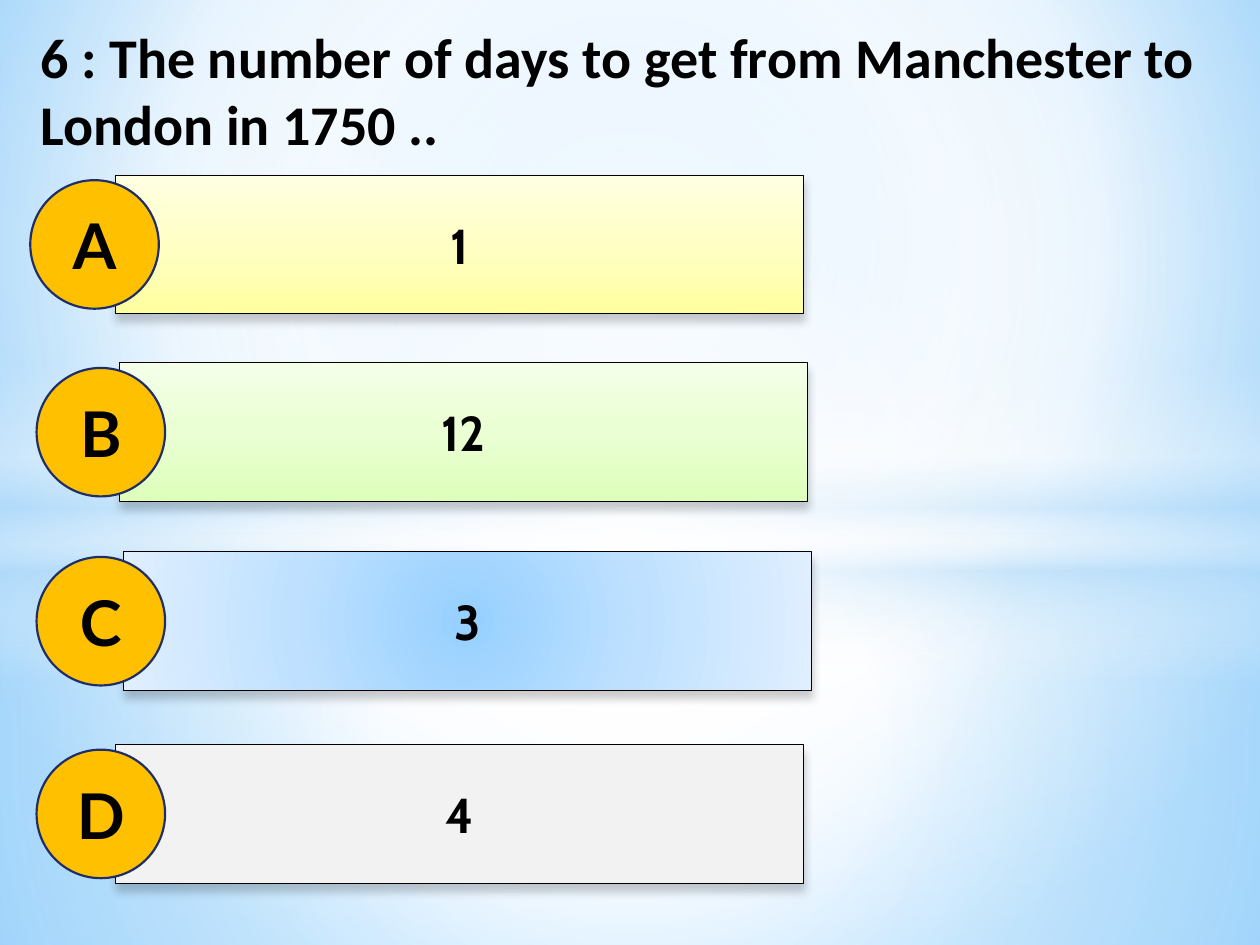
import lxml.etree
import pptx
import pptx.dml.color
import pptx.enum.shapes
import pptx.enum.text
import pptx.oxml
import pptx.oxml.ns
import pptx.util

Inches = pptx.util.Inches
Pt = pptx.util.Pt
RGBColor = pptx.dml.color.RGBColor
SHAPES = pptx.enum.shapes.MSO_SHAPE
ANCHOR = pptx.enum.text.MSO_ANCHOR
ALIGN = pptx.enum.text.PP_ALIGN
qn = pptx.oxml.ns.qn

BLACK = RGBColor(0x00, 0x00, 0x00)
WHITE = RGBColor(0xFF, 0xFF, 0xFF)
SKY = RGBColor(0xB4, 0xDC, 0xFA)
GOLD = RGBColor(0xFF, 0xC0, 0x00)
NAVY = RGBColor(0x1F, 0x2E, 0x69)
GREY = RGBColor(0xF2, 0xF2, 0xF2)
YELLOWS = RGBColor(0xFF, 0xFF, 0xA0), RGBColor(0xFF, 0xFF, 0xC5), RGBColor(0xFF, 0xFF, 0xE3)
GREENS = RGBColor(0xDE, 0xFF, 0xBB), RGBColor(0xEA, 0xFF, 0xD3), RGBColor(0xF4, 0xFF, 0xE9)
BLUES = RGBColor(0x96, 0xD0, 0xFF), RGBColor(0xBF, 0xE1, 0xFF), RGBColor(0xE0, 0xEF, 0xFF)
PALE_SKY = RGBColor(0x9E, 0xD5, 0xFF)
DEEP_SKY = RGBColor(0x5B, 0xB9, 0xFF)

CENTRE = (50, 50, 50, 50)


def add_element(parent, tag, **attributes):
    element = lxml.etree.SubElement(parent, qn(tag))
    for name, value in attributes.items():
        element.set(name, str(value))
    return element


def add_colour(parent, colour, opacity):
    element = add_element(parent, "a:srgbClr", val=colour)
    if opacity < 100:
        add_element(element, "a:alpha", val=opacity * 1000)


def set_gradient(properties, stops, angle=None, focus=CENTRE):
    """Swap a solid fill for a gradient; stops are (position, colour, opacity)."""
    gradient = pptx.oxml.parse_xml("<a:gradFill %s/>" % pptx.oxml.ns.nsdecls("a"))
    gradient.set("rotWithShape", "1")
    stop_list = add_element(gradient, "a:gsLst")
    for position, colour, opacity in stops:
        add_colour(add_element(stop_list, "a:gs", pos=position * 1000), colour, opacity)
    if angle is None:
        circle = add_element(gradient, "a:path")
        circle.set("path", "circle")
        sides = {side: value * 1000 for side, value in zip("ltrb", focus)}
        add_element(circle, "a:fillToRect", **sides)
    else:
        add_element(gradient, "a:lin", ang=angle * 60000, scaled=0)
    properties.replace(properties.find(qn("a:solidFill")), gradient)


class QuizSlide:
    title_font, answer_font, letter_font = "Calibri", "Cabin", "Lato"

    def __init__(self, presentation):
        self.slide = presentation.slides.add_slide(presentation.slide_layouts[5])

    def background(self, stops, focus):
        self.slide.background.fill.solid()
        properties = self.slide.element.find(".//" + qn("p:bgPr"))
        set_gradient(properties, stops, focus=focus)

    def shape(self, kind, left, top, width, height, colour):
        shape = self.slide.shapes.add_shape(
            kind, Inches(left), Inches(top), Inches(width), Inches(height))
        shape.shadow.inherit = False
        shape.fill.solid()
        shape.fill.fore_color.rgb = colour
        shape.line.fill.background()
        return shape

    def wash(self, kind, top, height, stops, angle=None):
        shape = self.shape(kind, 0, top, 10, height, WHITE)
        set_gradient(shape.element.spPr, stops, angle)

    def add_text(self, shape, text, font, size, alignment):
        paragraph = shape.text_frame.paragraphs[0]
        paragraph.alignment = alignment
        run = paragraph.add_run()
        run.text = text
        run.font.name = font
        run.font.size = Pt(size)
        run.font.bold = True
        run.font.color.rgb = BLACK

    def title(self, text, left, top, width, height):
        title = self.slide.shapes.title
        title.left, title.top = Inches(left), Inches(top)
        title.width, title.height = Inches(width), Inches(height)
        title.text_frame.word_wrap = True
        title.text_frame.auto_size = pptx.enum.text.MSO_AUTO_SIZE.NONE
        title.text_frame.vertical_anchor = ANCHOR.TOP
        self.add_text(title, text, self.title_font, 32, ALIGN.LEFT)
        # Bring the title in front of the washes
        self.slide.shapes.element.append(title.element)

    def outline(self, shape, colour, width):
        shape.line.color.rgb = colour
        shape.line.width = Pt(width)
        shape.text_frame.vertical_anchor = ANCHOR.MIDDLE

    def answer_bar(self, text, left, top, colours, angle):
        bar = self.shape(SHAPES.RECTANGLE, left, top, 5.46, 1.1, colours[0])
        self.outline(bar, BLACK, 0.5)
        properties = bar.element.spPr
        if len(colours) > 1:
            stops = [(50 * i, colour, 100) for i, colour in enumerate(colours)]
            set_gradient(properties, stops, angle)
        shadow = add_element(properties.find(qn("a:effectLst")), "a:outerShdw",
                             blurRad=Pt(5), dist=Pt(4), dir=90 * 60000, rotWithShape=0)
        add_colour(shadow, BLACK, 20)
        self.add_text(bar, text, self.answer_font, 28, ALIGN.CENTER)

    def letter_badge(self, letter, left, top):
        badge = self.shape(SHAPES.OVAL, left, top, 1.02, 1.02, GOLD)
        self.outline(badge, NAVY, 1.25)
        self.add_text(badge, letter, self.letter_font, 36, ALIGN.CENTER)


def main():
    presentation = pptx.Presentation()
    presentation.slide_width, presentation.slide_height = Inches(10), Inches(7.5)
    quiz = QuizSlide(presentation)

    # Backdrop: sky gradient with translucent washes
    quiz.background([(0, PALE_SKY, 100), (60, WHITE, 100), (100, DEEP_SKY, 100)],
                    (20, 10, 20, 60))
    quiz.wash(SHAPES.RECTANGLE, 4.23, 3.27, [(0, WHITE, 91), (37, WHITE, 76), (100, SKY, 79)])
    quiz.wash(SHAPES.RECTANGLE, 0, 4.23, [(0, WHITE, 89), (48, WHITE, 62), (100, SKY, 79)])
    quiz.wash(SHAPES.RECTANGLE, 2.9, 2.5,
              [(0, WHITE, 0), (29, WHITE, 30), (45, SKY, 40),
               (55, WHITE, 26), (65, SKY, 60), (100, WHITE, 0)], angle=90)
    quiz.wash(SHAPES.OVAL, 1.75, 5.58, [(0, WHITE, 100), (54, WHITE, 0)])

    # Question
    quiz.title("6 : The number of days to get from Manchester to London in 1750 ..",
               0.22, 0.13, 9.61, 1.6)

    # Answers: letter, text, badge left, bar left, bar top, colours, gradient angle
    answers = [
        ("A", "1", 0.24, 0.92, 1.39, YELLOWS, 270),
        ("B", "12", 0.29, 0.95, 2.88, GREENS, 270),
        ("C", "3", 0.29, 0.98, 4.38, BLUES, None),
        ("D", "4", 0.29, 0.92, 5.91, (GREY,), None),
    ]
    for letter, text, badge_left, bar_left, top, colours, angle in answers:
        quiz.answer_bar(text, bar_left, top, colours, angle)
        quiz.letter_badge(letter, badge_left, top + 0.04)

    presentation.save("out.pptx")


if __name__ == "__main__":
    main()
